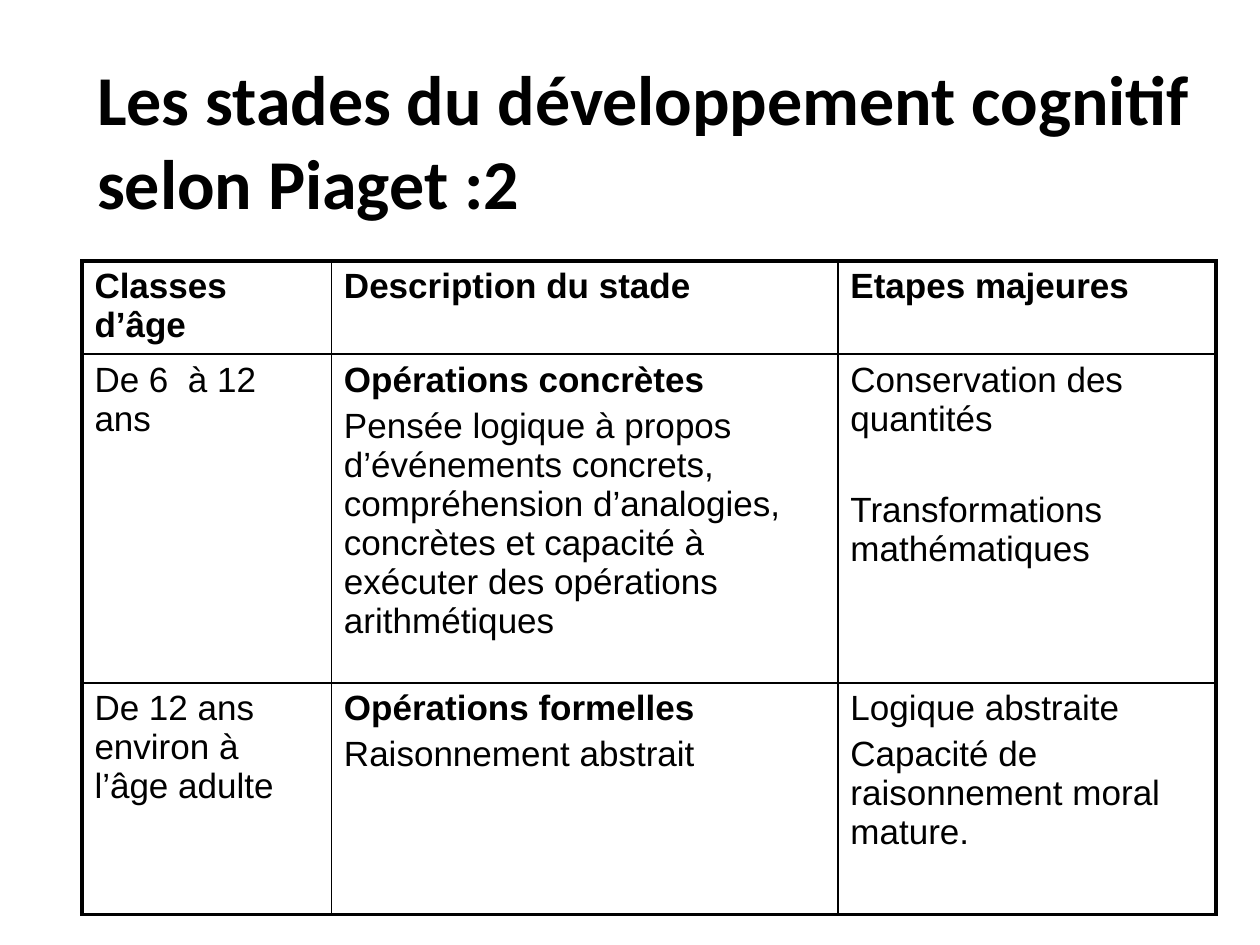
from dataclasses import dataclass

from lxml.etree import SubElement
from pptx import Presentation
from pptx.dml.color import RGBColor
from pptx.enum.text import MSO_ANCHOR, PP_ALIGN
from pptx.oxml.ns import qn
from pptx.slide import Slide
from pptx.table import _Cell
from pptx.text.text import _Paragraph
from pptx.util import Inches, Pt

BLACK = RGBColor(0, 0, 0)
WHITE = RGBColor(255, 255, 255)
COLUMN_WIDTHS = (1.98, 4.02, 3)
ROW_HEIGHTS = (0.74, 2.61, 1.84)
OUTER_LINE, INNER_LINE = Pt(2.25), Pt(1)
LINE_GAP, SECTION_GAP = 4, 30


@dataclass(frozen=True)
class Line:
    text: str
    bold: bool = False
    before: float = LINE_GAP


ROWS = (
    (
        (Line("Classes d’âge", True),),
        (Line("Description du stade", True),),
        (Line("Etapes majeures", True),),
    ),
    (
        (Line("De 6  à 12 ans"),),
        (
            Line("Opérations concrètes", True),
            Line(
                "Pensée logique à propos d’événements concrets, "
                "compréhension d’analogies, concrètes et capacité à "
                "exécuter des opérations arithmétiques"
            ),
        ),
        (
            Line("Conservation des quantités"),
            Line("Transformations mathématiques", before=SECTION_GAP),
        ),
    ),
    (
        (Line("De 12 ans environ à l’âge adulte"),),
        (Line("Opérations formelles", True), Line("Raisonnement abstrait")),
        (Line("Logique abstraite"), Line("Capacité de raisonnement moral mature.")),
    ),
)


def add_span(para: _Paragraph, text: str, font: str, size: float, bold: bool) -> None:
    span = para.add_run()
    span.text = text
    span.font.name = font
    span.font.size = Pt(size)
    span.font.bold = bold
    span.font.color.rgb = BLACK


def set_borders(cell: _Cell, row: int, column: int) -> None:
    outer_sides = {
        "a:lnL": column == 0,
        "a:lnR": column == len(COLUMN_WIDTHS) - 1,
        "a:lnT": row == 0,
        "a:lnB": row == len(ROW_HEIGHTS) - 1,
    }
    properties = cell._tc.get_or_add_tcPr()
    for position, (side, is_outer) in enumerate(outer_sides.items()):
        width = OUTER_LINE if is_outer else INNER_LINE
        border = SubElement(properties, qn(side), w=str(int(width)))
        fill = SubElement(border, qn("a:solidFill"))
        SubElement(fill, qn("a:srgbClr"), val=str(BLACK))
        properties.insert(position, border)


def fill_cell(cell: _Cell, lines: tuple[Line, ...]) -> None:
    cell.fill.background()
    for index, line in enumerate(lines):
        para = cell.text_frame.add_paragraph() if index else cell.text_frame.paragraphs[0]
        if index:
            para.space_before = Pt(line.before)
        add_span(para, line.text, "Arial", 20, line.bold)


def add_title(page: Slide) -> None:
    title = page.shapes.title
    title.left, title.top = Inches(0.67), Inches(0.36)
    title.width, title.height = Inches(9), Inches(1.5)
    title.text_frame.vertical_anchor = MSO_ANCHOR.MIDDLE
    para = title.text_frame.paragraphs[0]
    para.alignment = PP_ALIGN.LEFT
    add_span(para, "Les stades du développement cognitif selon Piaget :2", "Calibri", 40, True)


def add_stages(page: Slide) -> None:
    table = page.shapes.add_table(
        len(ROW_HEIGHTS), len(COLUMN_WIDTHS), Inches(0.65), Inches(2.07),
        Inches(sum(COLUMN_WIDTHS)), Inches(sum(ROW_HEIGHTS)),
    ).table
    table.first_row = table.horz_banding = False
    for column, width in zip(table.columns, COLUMN_WIDTHS):
        column.width = Inches(width)
    for row, height in zip(table.rows, ROW_HEIGHTS):
        row.height = Inches(height)
    for row, contents in enumerate(ROWS):
        for column, lines in enumerate(contents):
            cell = table.cell(row, column)
            fill_cell(cell, lines)
            set_borders(cell, row, column)


def main() -> None:
    deck = Presentation()
    deck.slide_width, deck.slide_height = Inches(10), Inches(7.5)
    page = deck.slides.add_slide(deck.slide_layouts[5])
    page.background.fill.solid()
    page.background.fill.fore_color.rgb = WHITE
    add_stages(page)
    add_title(page)
    deck.save("out.pptx")


if __name__ == "__main__":
    main()
